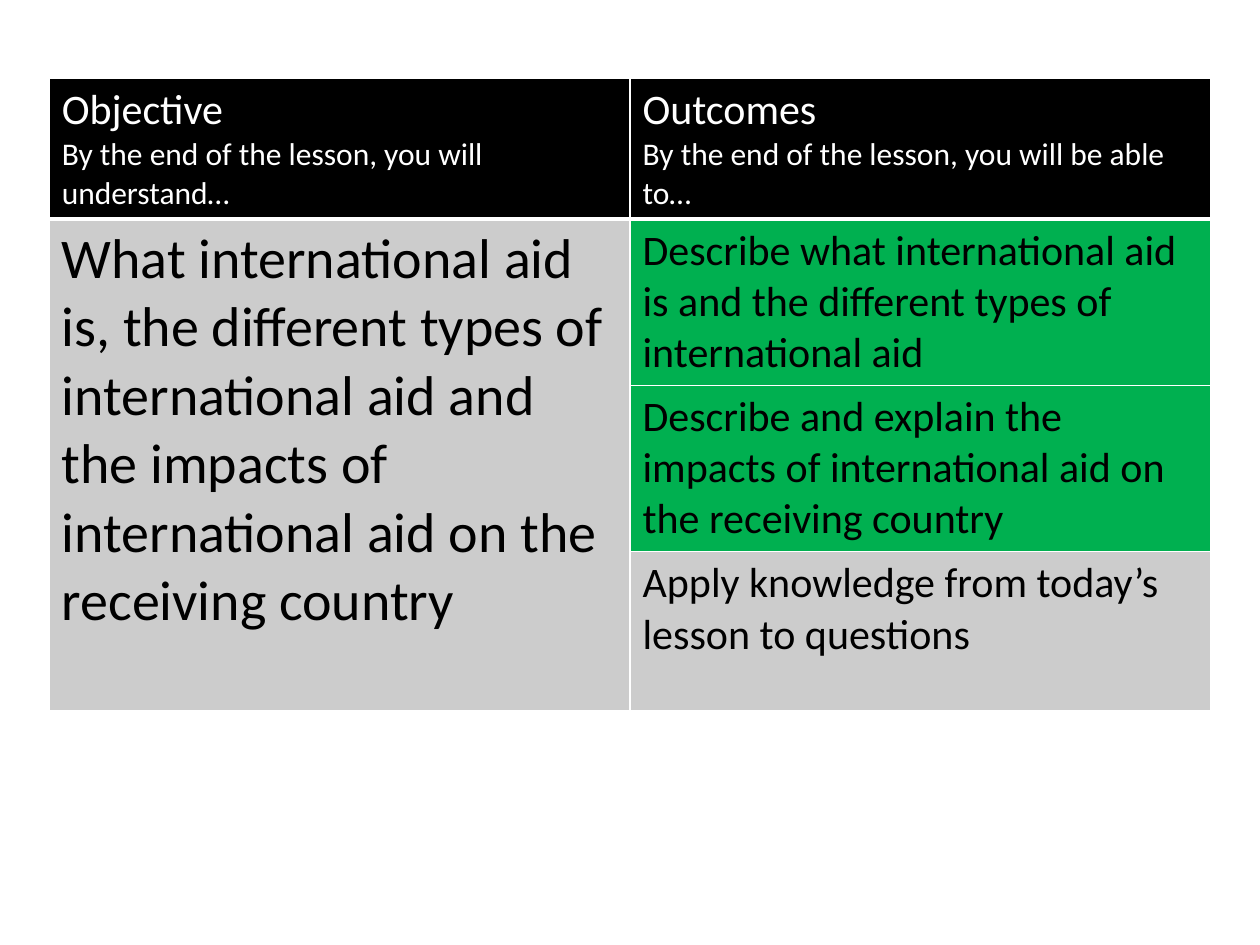
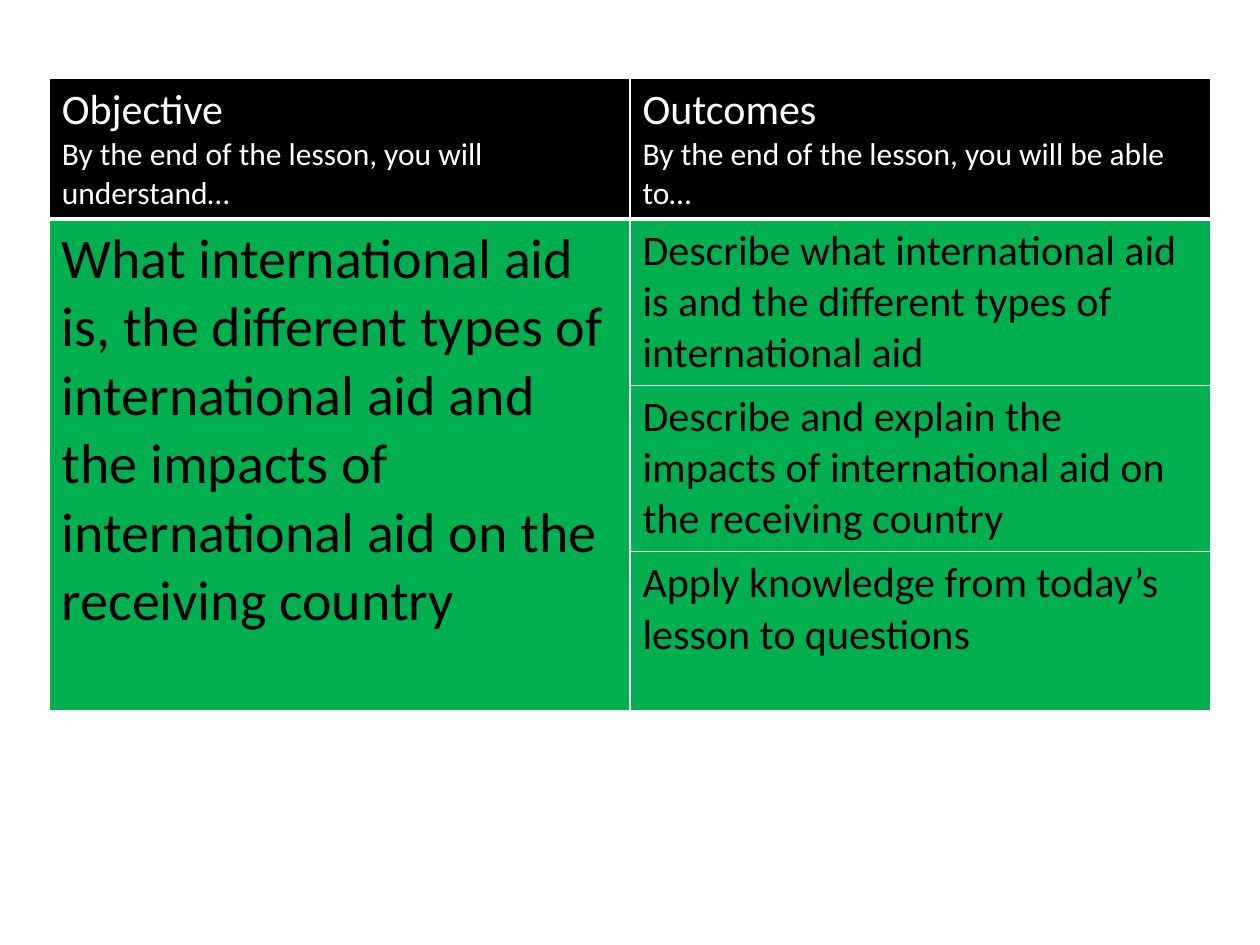
from dataclasses import dataclass

from lxml.etree import SubElement
from pptx import Presentation
from pptx.dml.color import RGBColor
from pptx.oxml.ns import qn
from pptx.util import Inches, Pt

FONT = "Calibri"
WHITE = "FFFFFF"
BLACK = "000000"
GREY = "CCCCCC"
GREEN = "00B050"

LEFT, TOP = 0.39, 0.62
COLUMN_WIDTH = 4.61
ROW_HEIGHTS = (1.11, 1.32, 1.32, 1.26)
HEADER_SIZES = (24, 18)
OBJECTIVE_SIZE = 32
OUTCOME_SIZE = 24

HEADERS = (
    ("Objective", "By the end of the lesson, you will understand…"),
    ("Outcomes", "By the end of the lesson, you will be able to…"),
)
OBJECTIVE = (
    "What international aid is, the different types of international aid "
    "and the impacts of international aid on the receiving country"
)
OUTCOMES = (
    "Describe what international aid is and the different types of international aid",
    "Describe and explain the impacts of international aid on the receiving country",
    "Apply knowledge from today’s lesson to questions",
)


@dataclass(frozen=True)
class Progress:
    objective_fill: str
    outcome_fills: tuple[str, ...]


PROGRESS_STEPS = (
    Progress(GREY, (GREEN, GREEN, GREY)),
    Progress(GREEN, (GREEN, GREEN, GREEN)),
)


def color(value: str) -> RGBColor:
    return RGBColor.from_string(value)


def add_borders(cell, bottom_width: float) -> None:
    properties = cell._tc.get_or_add_tcPr()
    widths = {"lnL": 1, "lnR": 1, "lnT": 1, "lnB": bottom_width}
    for side, width in widths.items():
        line = SubElement(properties, qn(f"a:{side}"), w=str(Pt(width)))
        fill = SubElement(line, qn("a:solidFill"))
        SubElement(fill, qn("a:srgbClr"), val=WHITE)


def style_cell(cell, fill: str, bottom_width: float = 1) -> None:
    add_borders(cell, bottom_width)
    cell.fill.solid()
    cell.fill.fore_color.rgb = color(fill)


def write_cell(cell, lines: tuple[str, ...], sizes: tuple[int, ...], text_color: str) -> None:
    cell.text_frame.text = "\n".join(lines)
    for para, size in zip(cell.text_frame.paragraphs, sizes):
        for span in para.runs:
            span.font.name = FONT
            span.font.size = Pt(size)
            span.font.bold = False
            span.font.color.rgb = color(text_color)


def add_lesson_table(page, progress: Progress) -> None:
    frame = page.shapes.add_table(
        len(ROW_HEIGHTS), len(HEADERS), Inches(LEFT), Inches(TOP),
        Inches(COLUMN_WIDTH * len(HEADERS)), Inches(sum(ROW_HEIGHTS)),
    )
    table = frame.table
    table.horz_banding = False
    for column in table.columns:
        column.width = Inches(COLUMN_WIDTH)
    for row, height in zip(table.rows, ROW_HEIGHTS):
        row.height = Inches(height)

    for index, lines in enumerate(HEADERS):
        header = table.cell(0, index)
        style_cell(header, BLACK, bottom_width=3)
        write_cell(header, lines, HEADER_SIZES, WHITE)

    for index, (outcome, fill) in enumerate(zip(OUTCOMES, progress.outcome_fills), start=1):
        style_cell(table.cell(index, 0), progress.objective_fill)
        outcome_cell = table.cell(index, 1)
        style_cell(outcome_cell, fill)
        write_cell(outcome_cell, (outcome,), (OUTCOME_SIZE,), BLACK)

    objective_cell = table.cell(1, 0)
    objective_cell.merge(table.cell(len(OUTCOMES), 0))
    write_cell(objective_cell, (OBJECTIVE,), (OBJECTIVE_SIZE,), BLACK)


def main() -> None:
    deck = Presentation()
    deck.slide_width = Inches(10)
    deck.slide_height = Inches(7.5)
    blank_layout = deck.slide_layouts[6]
    for progress in PROGRESS_STEPS:
        page = deck.slides.add_slide(blank_layout)
        add_lesson_table(page, progress)
    deck.save("out.pptx")


if __name__ == "__main__":
    main()
